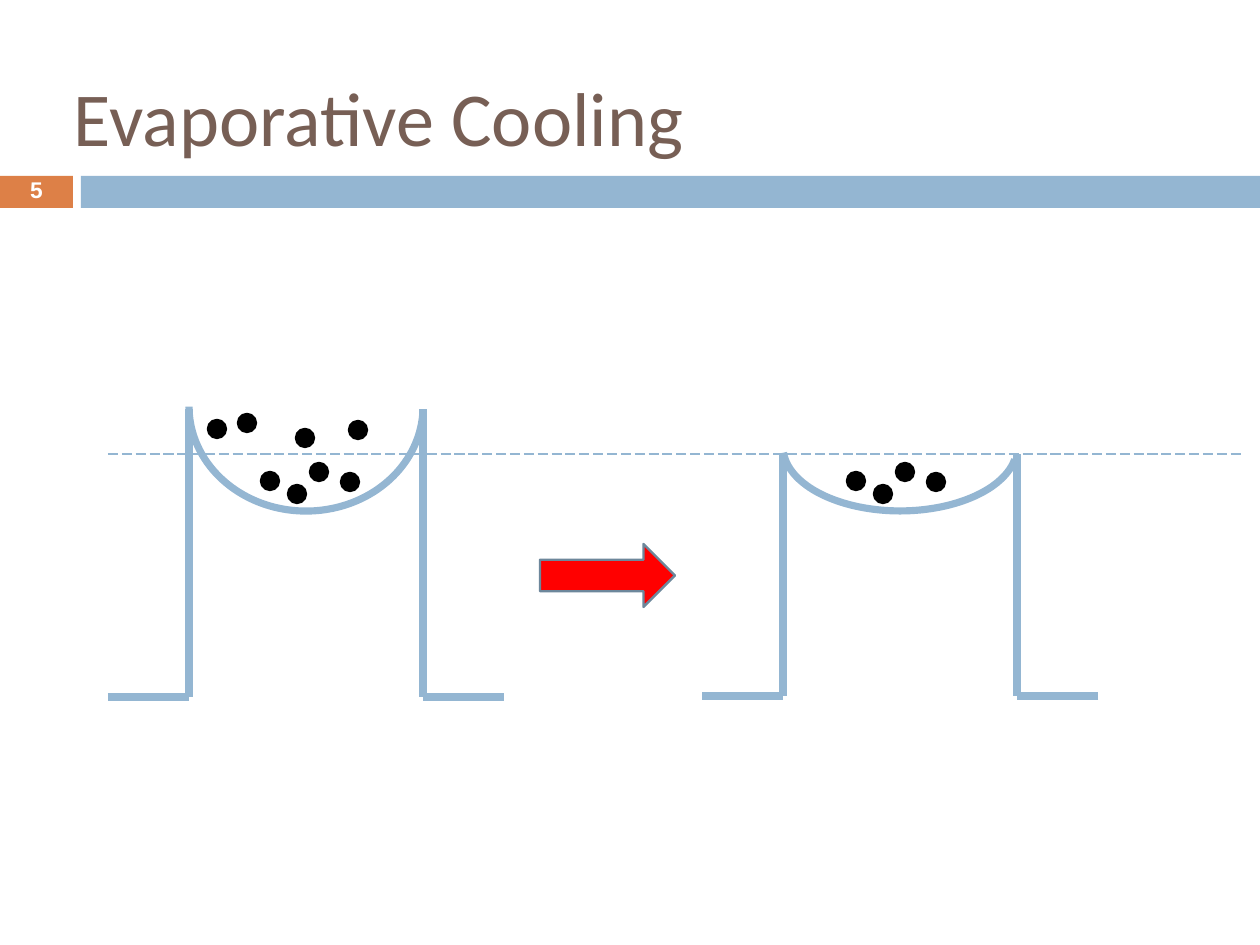
import pptx
import pptx.util
from pptx.dml.color import RGBColor
from pptx.enum.dml import MSO_LINE
from pptx.enum.shapes import MSO_CONNECTOR, MSO_SHAPE
from pptx.enum.text import MSO_ANCHOR, PP_ALIGN
from pptx.oxml.xmlchemy import OxmlElement

PX = 8000  # a slide of 28 by 21 cm is 1260 by 945 px
SLIDE_WIDTH, SLIDE_HEIGHT = 1260, 945
BLUE = RGBColor(0x94, 0xB6, 0xD2)
ORANGE = RGBColor(0xDD, 0x80, 0x47)
BROWN = RGBColor(0x77, 0x5F, 0x55)
WHITE = RGBColor(0xFF, 0xFF, 0xFF)
BLACK = RGBColor(0, 0, 0)
RED = RGBColor(0xFF, 0, 0)
ARROW_EDGE = RGBColor(0x6D, 0x87, 0x9B)

WALL_WIDTH = 4.5
LEDGE = 81
ATOM_SIZE = 18
COLD_ATOMS = [(0, 9), (27, 22), (49, 0), (80, 10)]
HOT_ATOMS = [(-53, -43), (-23, -49), (35, -34), (88, -42)]


def emu(*lengths):
    return [pptx.util.Emu(length * PX) for length in lengths]


def add_shape(slide, kind, box, fill=None, line=None, width=1.5):
    shape = slide.shapes.add_shape(kind, *emu(*box))
    shape.shadow.inherit = False
    if fill is None:
        shape.fill.background()
    else:
        shape.fill.solid()
        shape.fill.fore_color.rgb = fill
    if line is None:
        shape.line.fill.background()
    else:
        shape.line.color.rgb = line
        shape.line.width = pptx.util.Pt(width)
    return shape


def add_line(slide, start, end, width=WALL_WIDTH):
    line = slide.shapes.add_connector(MSO_CONNECTOR.STRAIGHT, *emu(*start, *end))
    line.line.color.rgb = BLUE
    line.line.width = pptx.util.Pt(width)
    line._element.spPr.append(OxmlElement("a:effectLst"))
    return line


def set_text(text_frame, text, font, size, color, alignment, bold=False):
    text_frame.text = text
    text_frame.word_wrap = True
    text_frame.vertical_anchor = MSO_ANCHOR.MIDDLE
    paragraph = text_frame.paragraphs[0]
    paragraph.alignment = alignment
    run = paragraph.runs[0]
    run.font.name = font
    run.font.size = pptx.util.Pt(size)
    run.font.color.rgb = color
    run.font.bold = bold


def set_margins(text_frame, left, top, right, bottom):
    (text_frame.margin_left, text_frame.margin_top,
     text_frame.margin_right, text_frame.margin_bottom) = emu(left, top, right, bottom)


def add_header(slide, left, top, width, height):
    """Title above a blue band that starts with the orange number box."""
    number_width, gap = 73, 8
    add_shape(slide, MSO_SHAPE.RECTANGLE, (left, top, number_width, height), ORANGE)
    band_left = left + number_width + gap
    add_shape(slide, MSO_SHAPE.RECTANGLE,
              (band_left, top, width - number_width - gap, height), BLUE)

    number = slide.shapes.add_textbox(*emu(left, top - 1, number_width, height + 2))
    set_margins(number.text_frame, 0, 0, 0, 0)
    set_text(number.text_frame, "5", "Arial", 14.3, WHITE, PP_ALIGN.CENTER, bold=True)
    number.text_frame.paragraphs[0].line_spacing = 0.83

    title = slide.shapes.title
    title.left, title.top, title.width, title.height = emu(left + 63, top - 138, 1134, 158)
    set_margins(title.text_frame, 11, 5, 11, 6)
    set_text(title.text_frame, "Evaporative Cooling", "Calibri", 48, BROWN, PP_ALIGN.LEFT)


def add_trap(slide, left, rim, width, height):
    """Two walls on ledges, with the box top at the rim of the walls."""
    right, floor = left + width, rim + height
    for outer, wall in ((left, left + LEDGE), (right, right - LEDGE)):
        add_line(slide, (outer, floor), (wall, floor))
        add_line(slide, (wall, floor), (wall, rim))


def add_bowl(slide, box, rotation, start, end):
    bowl = add_shape(slide, MSO_SHAPE.ARC, box, line=BLUE, width=WALL_WIDTH)
    bowl.adjustments[0], bowl.adjustments[1] = start, end
    bowl.rotation = rotation


def add_atoms(slide, left, top, offsets):
    for across, down in offsets:
        add_shape(slide, MSO_SHAPE.OVAL,
                  (left + across, top + down, ATOM_SIZE, ATOM_SIZE), BLACK, BLACK)


def main():
    presentation = pptx.Presentation()
    presentation.slide_width, presentation.slide_height = emu(SLIDE_WIDTH, SLIDE_HEIGHT)
    slide = presentation.slides.add_slide(presentation.slide_layouts[5])

    add_header(slide, 0, 176, SLIDE_WIDTH, 32)
    add_trap(slide, 108, 409, 396, 288)
    add_trap(slide, 702, 454, 396, 242)
    energy_level = add_line(slide, (108, 454), (1241, 454), 0.79)
    energy_level.line.dash_style = MSO_LINE.LONG_DASH
    add_bowl(slide, (189, 302, 234, 209), 180, 109.43, 0)
    add_bowl(slide, (836, 330, 128, 234), 90, 165.78, 52.33)
    add_shape(slide, MSO_SHAPE.RIGHT_ARROW, (540, 544, 135, 63), RED, ARROW_EDGE)
    add_atoms(slide, 261, 463, COLD_ATOMS + HOT_ATOMS)
    add_atoms(slide, 847, 463, COLD_ATOMS)

    presentation.save("out.pptx")


if __name__ == "__main__":
    main()
